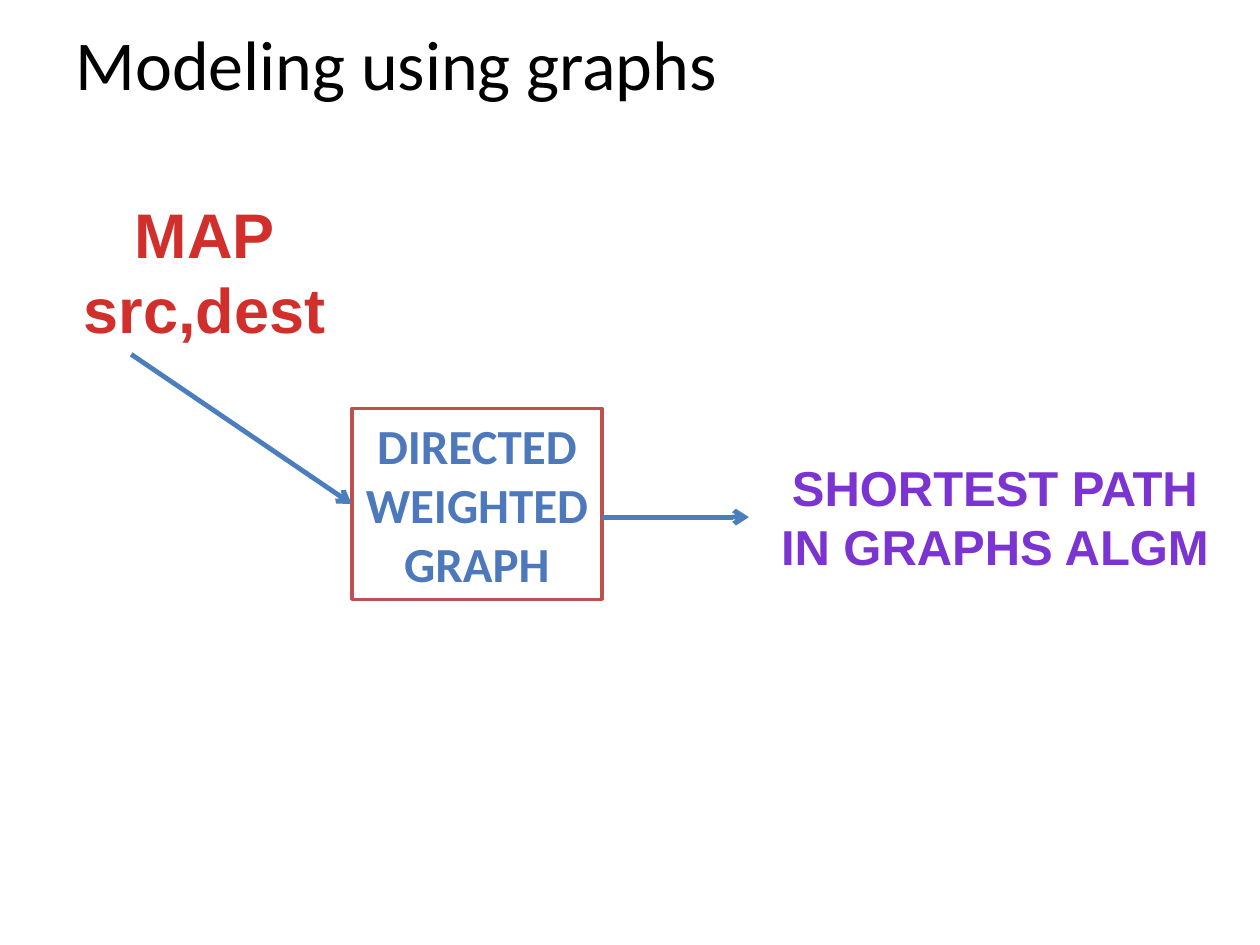
"""Build a slide that models a map as a graph for shortest paths."""
from lxml import etree
from pptx import Presentation
from pptx.dml.color import RGBColor
from pptx.enum import shapes, text
from pptx.oxml.ns import qn
from pptx.util import Pt


def color(value):
    return RGBColor.from_string(value)


def write(box, words, font, size, ink, bold=True, wrap=True):
    frame = box.text_frame
    frame.text = words
    frame.word_wrap = wrap
    for paragraph in frame.paragraphs:
        if bold:
            paragraph.alignment = text.PP_ALIGN.CENTER
        for span in paragraph.runs:
            span.font.name = font
            span.font.size = Pt(size)
            span.font.bold = bold
            span.font.color.rgb = color(ink)


deck = Presentation()
deck.slide_width, deck.slide_height = Pt(720), Pt(540)
page = deck.slides.add_slide(deck.slide_layouts[6])

title = page.shapes.add_textbox(Pt(36), Pt(0), Pt(648), Pt(72))
write(title, "Modeling using graphs", "Calibri", 40, "000000", bold=False)
title.text_frame.vertical_anchor = text.MSO_ANCHOR.MIDDLE

source = page.shapes.add_textbox(Pt(36), Pt(108), Pt(162), Pt(94.5))
write(source, "MAP\nsrc,dest", "Arial", 36, "D02F2C")

graph = page.shapes.add_shape(shapes.MSO_SHAPE.RECTANGLE, Pt(201), Pt(233.5), Pt(143), Pt(109))
graph.shadow.inherit = False
graph.fill.solid()
graph.fill.fore_color.rgb = color("FFFFFF")
graph.line.color.rgb = color("C0504D")
graph.line.width = Pt(2)
write(graph, "DIRECTED\vWEIGHTED\nGRAPH", "Calibri", 28, "4D79BC", wrap=False)

result = page.shapes.add_textbox(Pt(438), Pt(258), Pt(261), Pt(75))
write(result, "SHORTEST PATH\nIN GRAPHS ALGM", "Arial", 28, "7B34D2", wrap=False)

arrows = []
for left, top, right, bottom in [(75, 202.5, 201, 288), (344, 295.5, 428, 295.5)]:
    arrow = page.shapes.add_connector(
        shapes.MSO_CONNECTOR.STRAIGHT, Pt(left), Pt(top), Pt(right), Pt(bottom))
    arrow.line.color.rgb = color("4B7EBC")
    arrow.line.width = Pt(2.75)
    etree.SubElement(arrow.line._get_or_add_ln(), qn("a:tailEnd"), type="arrow")
    etree.SubElement(arrow._element.spPr, qn("a:effectLst"))
    arrows.append(arrow)
arrows[0].end_connect(graph, 1)

deck.save("out.pptx")
